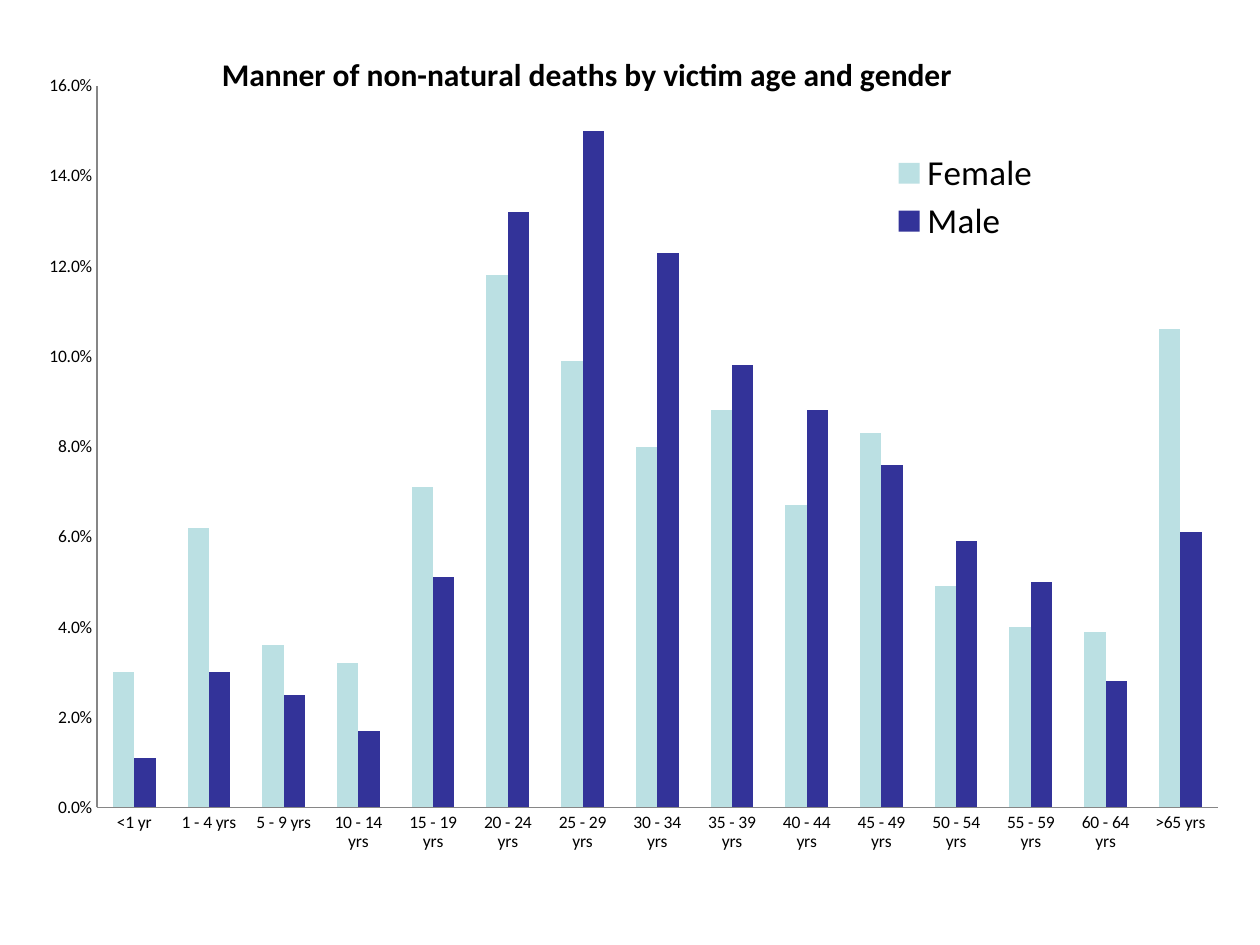
from dataclasses import dataclass
from typing import Any

from lxml import etree
from pptx import Presentation
from pptx.chart.chart import Chart
from pptx.chart.data import CategoryChartData
from pptx.dml.color import RGBColor
from pptx.enum.chart import XL_CHART_TYPE, XL_LEGEND_POSITION, XL_TICK_MARK
from pptx.oxml.ns import qn
from pptx.util import Cm, Pt

CLUSTERED = XL_CHART_TYPE.COLUMN_CLUSTERED
LEGEND_RIGHT = XL_LEGEND_POSITION.RIGHT
NO_TICK = XL_TICK_MARK.NONE

BLACK = RGBColor(0x00, 0x00, 0x00)
AXIS_GRAY = RGBColor(0x86, 0x86, 0x86)
PALE_TEAL = RGBColor(0xBB, 0xE0, 0xE3)
NAVY = RGBColor(0x33, 0x33, 0x99)

TITLE = "Manner of non-natural deaths by victim age and gender"
PERCENT_FORMAT = "0.0%"
AGE_GROUPS = [
    "<1 yr",
    "1 - 4 yrs",
    "5 - 9 yrs",
    *(f"{start} - {start + 4} yrs" for start in range(10, 65, 5)),
    ">65 yrs",
]


@dataclass(frozen=True)
class GenderSeries:
    name: str
    color: RGBColor
    percentages: tuple[float, ...]


@dataclass(frozen=True)
class Layout:
    tag: str
    child_index: int
    fractions: dict[str, float]
    target: str = ""


GENDERS = [
    GenderSeries("Female", PALE_TEAL, (3, 6.2, 3.6, 3.2, 7.1, 11.8, 9.9, 8,
                                       8.8, 6.7, 8.3, 4.9, 4, 3.9, 10.6)),
    GenderSeries("Male", NAVY, (1.1, 3, 2.5, 1.7, 5.1, 13.2, 15, 12.3,
                                9.8, 8.8, 7.6, 5.9, 5, 2.8, 6.1)),
]
LAYOUTS = [
    Layout("c:title", 1, {"x": 0.16, "y": 0.04}),
    Layout("c:plotArea", 0, {"x": 0.062, "y": 0.083, "w": 0.92, "h": 0.79}, "inner"),
    Layout("c:legend", 1, {"x": 0.7, "y": 0.15, "w": 0.15, "h": 0.11}),
]


def set_attributes(target: Any, values: dict[str, Any]) -> None:
    for name, value in values.items():
        setattr(target, name, value)


def format_font(font: Any, size: int, bold: bool = False) -> None:
    set_attributes(font, {"size": Pt(size), "bold": bold})
    font.color.rgb = BLACK


def format_axis(axis: Any, values: dict[str, Any]) -> None:
    common = {
        "major_tick_mark": NO_TICK,
        "minor_tick_mark": NO_TICK,
        "has_major_gridlines": False,
    }
    set_attributes(axis, common | values)
    axis.format.line.color.rgb = AXIS_GRAY
    axis.format.line.width = Pt(0.75)


def apply_layout(chart: Chart, layout: Layout) -> None:
    parent = next(chart.element.iter(qn(layout.tag)))
    for existing in parent.findall(qn("c:layout")):
        parent.remove(existing)
    element = etree.Element(qn("c:layout"))
    manual = etree.SubElement(element, qn("c:manualLayout"))
    settings: dict[str, Any] = {"layoutTarget": layout.target} if layout.target else {}
    settings |= {f"{key}Mode": "edge" for key in ("x", "y")}
    settings |= layout.fractions
    for name, value in settings.items():
        etree.SubElement(manual, qn(f"c:{name}")).set("val", str(value))
    parent.insert(layout.child_index, element)


def add_deaths_chart(slide: Any) -> None:
    chart_data = CategoryChartData(number_format=PERCENT_FORMAT)
    chart_data.categories = AGE_GROUPS
    for gender in GENDERS:
        values = [round(percentage / 100, 3) for percentage in gender.percentages]
        chart_data.add_series(gender.name, values)
    chart = slide.shapes.add_chart(
        CLUSTERED, Cm(0.43), Cm(0.2), Cm(24.56), Cm(18.42), chart_data
    ).chart

    format_font(chart.font, 10)
    set_attributes(chart, {"has_title": True, "has_legend": True})
    title_frame = chart.chart_title.text_frame
    title_frame.text = TITLE
    format_font(title_frame.paragraphs[0].runs[0].font, 18, bold=True)
    set_attributes(chart.legend, {"position": LEGEND_RIGHT, "include_in_layout": False})
    format_font(chart.legend.font, 20)

    plot = chart.plots[0]
    set_attributes(plot, {"gap_width": 150, "overlap": 0, "vary_by_categories": False})
    for series, gender in zip(plot.series, GENDERS):
        series.format.fill.solid()
        series.format.fill.fore_color.rgb = gender.color

    format_axis(chart.category_axis, {})
    format_axis(
        chart.value_axis,
        {"minimum_scale": 0, "maximum_scale": 0.16, "major_unit": 0.02},
    )
    set_attributes(
        chart.value_axis.tick_labels,
        {"number_format": PERCENT_FORMAT, "number_format_is_linked": False},
    )
    for layout in LAYOUTS:
        apply_layout(chart, layout)


def main() -> None:
    presentation = Presentation()
    set_attributes(presentation, {"slide_width": Cm(25.4), "slide_height": Cm(19.05)})
    slide = presentation.slides.add_slide(presentation.slide_layouts[6])
    add_deaths_chart(slide)
    presentation.save("out.pptx")


if __name__ == "__main__":
    main()
